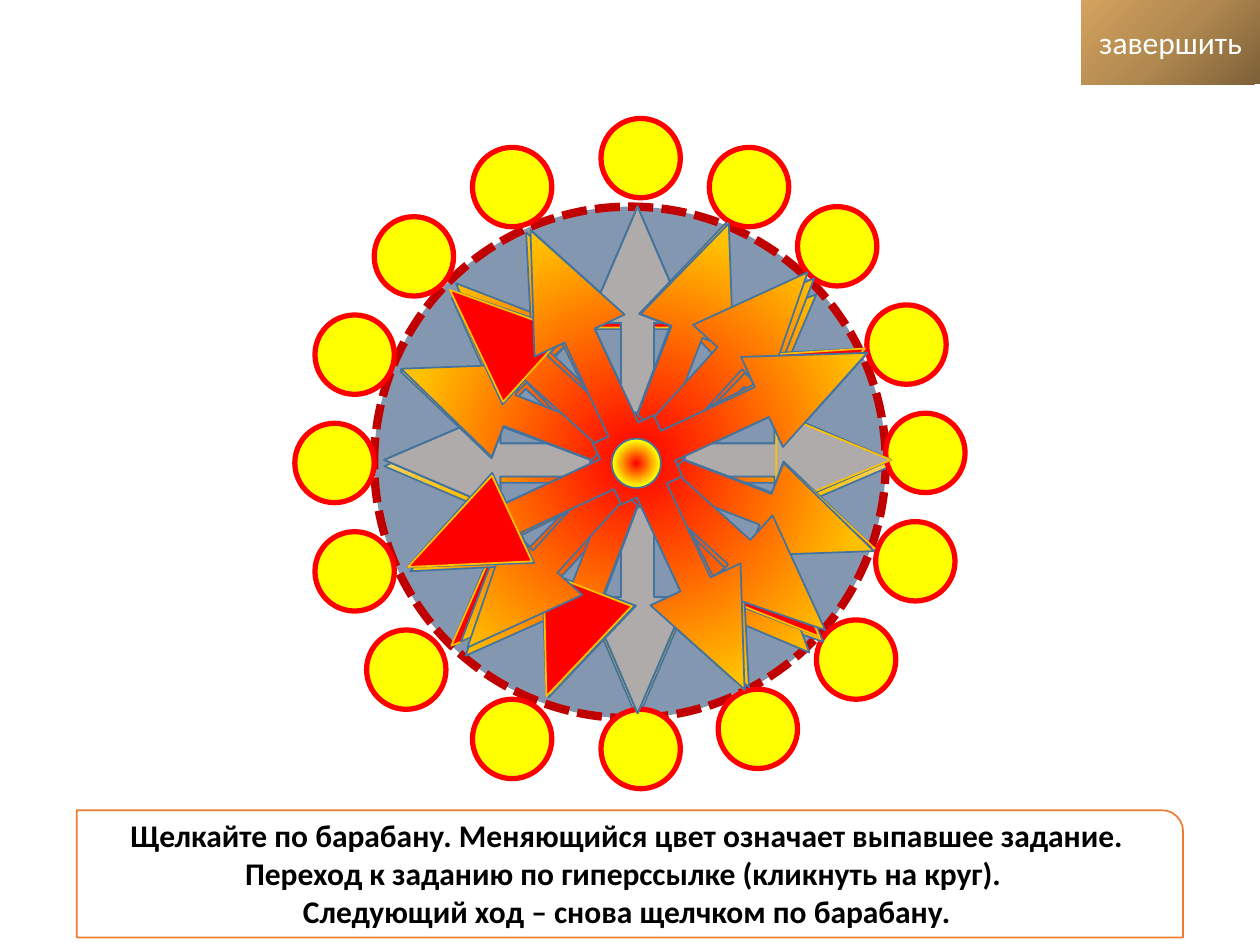
from dataclasses import dataclass
from math import cos, radians, sin
from typing import Optional, Union

from lxml import etree
from pptx import Presentation
from pptx.dml.color import RGBColor
from pptx.enum.dml import MSO_LINE
from pptx.enum.shapes import MSO_SHAPE
from pptx.enum.text import MSO_ANCHOR, MSO_AUTO_SIZE, PP_ALIGN
from pptx.oxml.ns import nsdecls, qn
from pptx.util import Inches, Pt

OVAL = MSO_SHAPE.OVAL
TRIANGLE = MSO_SHAPE.ISOSCELES_TRIANGLE
CALLOUT = MSO_SHAPE.QUAD_ARROW_CALLOUT
RECT = MSO_SHAPE.RECTANGLE
ROUND_RECT = MSO_SHAPE.ROUND_1_RECTANGLE
DASH = MSO_LINE.SQUARE_DOT
CENTER = PP_ALIGN.CENTER
TOP, MIDDLE = MSO_ANCHOR.TOP, MSO_ANCHOR.MIDDLE
FIT_SHAPE, NO_FIT = MSO_AUTO_SIZE.SHAPE_TO_FIT_TEXT, MSO_AUTO_SIZE.NONE

FONT = "Calibri"
GREY, RED, YELLOW, GOLD, BLUE = "AFABAB", "FF0000", "FFFF00", "FFC000", "43739E"


@dataclass(frozen=True)
class Gradient:
    colors: tuple[str, str, str]
    angle: Optional[int] = None


@dataclass(frozen=True)
class Spinner:
    angle: float
    cx: float = 5.06
    cy: float = 3.65
    grey: bool = False


Fill = Union[str, Gradient, None]
FIRE = Gradient((RED, GOLD, "E1EBFB"))
SUN = Gradient((RED, YELLOW, "E1EBFB"))
BRONZE = Gradient(("7D6038", "B18950", "D3A25E"), 225)

ARROW_SIZE, TIP_SIZE, HUB_SIZE = (4.02, 4.02), (0.75, 0.91), (0.39, 0.39)
ARROW_ADJ = (0.065, 0.098, 0.229, 0.133)
TIP_OFFSET, HUB_OFFSET = (0.0, -1.555), (-0.02, -0.02)
BALL = 0.63

BALLS = [
    (4.77, 0.94), (4.77, 5.63), (7.03, 3.28), (2.34, 3.36),
    (6.33, 1.64), (2.97, 1.72), (2.91, 5.0), (6.48, 4.92),
    (5.63, 1.17), (3.75, 1.17), (2.5, 2.5), (6.88, 2.42),
    (6.95, 4.14), (2.5, 4.22), (5.7, 5.47), (3.75, 5.55),
]

SPINNERS = [
    Spinner(42.8, cy=3.73), Spinner(226.1, cx=5.03, cy=3.73),
    Spinner(270), Spinner(155.1), Spinner(180), Spinner(0),
    Spinner(90, grey=True), Spinner(134.2), Spinner(334.9),
    Spinner(20.9), Spinner(63.9), Spinner(110.5), Spinner(201.1),
    Spinner(312.2), Spinner(245),
]


def rgb(color: str) -> RGBColor:
    return RGBColor.from_string(color)


def set_gradient(sp, gradient: Gradient) -> None:
    stops = "".join(
        f'<a:gs pos="{i * 50000}"><a:srgbClr val="{color}"/></a:gs>'
        for i, color in enumerate(gradient.colors)
    )
    if gradient.angle is None:
        shade = ('<a:path path="circle"><a:fillToRect l="50000" t="50000" '
                 'r="50000" b="50000"/></a:path>')
    else:
        shade = f'<a:lin ang="{gradient.angle * 60000}" scaled="0"/>'
    xml = (f'<a:gradFill {nsdecls("a")} rotWithShape="1">'
           f'<a:gsLst>{stops}</a:gsLst>{shade}</a:gradFill>')
    sp._element.spPr.find(qn("a:prstGeom")).addnext(etree.fromstring(xml))


def add_shape(shapes, kind, left: float, top: float, width: float, height: float,
              fill: Fill = None, line: Optional[str] = None, weight: float = 1,
              angle: float = 0):
    sp = shapes.add_shape(kind, Inches(left), Inches(top), Inches(width), Inches(height))
    sp.rotation = angle
    if isinstance(fill, Gradient):
        set_gradient(sp, fill)
    elif fill:
        sp.fill.solid()
        sp.fill.fore_color.rgb = rgb(fill)
    else:
        sp.fill.background()
    if line:
        sp.line.color.rgb = rgb(line)
        sp.line.width = Pt(weight)
    else:
        sp.line.fill.background()
    sp.shadow.inherit = False
    return sp


def add_spinner(shapes, spinner: Spinner) -> None:
    group = shapes.add_group_shape()
    turn = radians(spinner.angle)

    def add_part(kind, size, offset, fill: Fill, line: str):
        dx, dy = offset
        x = spinner.cx + dx * cos(turn) - dy * sin(turn)
        y = spinner.cy + dx * sin(turn) + dy * cos(turn)
        w, h = size
        return add_shape(group.shapes, kind, x - w / 2, y - h / 2, w, h,
                         GREY if spinner.grey else fill, line, angle=spinner.angle)

    arrows = add_part(CALLOUT, ARROW_SIZE, (0, 0), FIRE, BLUE)
    for i, value in enumerate(ARROW_ADJ):
        arrows.adjustments[i] = value
    add_part(TRIANGLE, TIP_SIZE, TIP_OFFSET, RED, GOLD)
    add_part(OVAL, HUB_SIZE, HUB_OFFSET, SUN, BLUE)


def set_text(sp, text: str, *, color: str, bold: bool = False, size: float = 18,
             anchor=MIDDLE, auto_size=NO_FIT) -> None:
    tf = sp.text_frame
    tf.word_wrap = True
    tf.auto_size = auto_size
    tf.vertical_anchor = anchor
    tf.text = text
    for p in tf.paragraphs:
        p.alignment = CENTER
        for r in p.runs:
            r.font.name = FONT
            r.font.size = Pt(size)
            r.font.bold = bold
            r.font.color.rgb = rgb(color)


def main() -> None:
    prs = Presentation()
    prs.slide_width, prs.slide_height = Inches(10), Inches(7.5)
    s = prs.slides.add_slide(prs.slide_layouts[6])
    shapes = s.shapes

    drum = (2.97, 1.64, 4.06, 4.06)
    add_shape(shapes, OVAL, *drum, fill="8497B0")
    rim = add_shape(shapes, OVAL, *drum, line="C00000", weight=4.75)
    rim.line.dash_style = DASH

    add_spinner(shapes, Spinner(0, cy=3.7))
    for left, top in BALLS:
        add_shape(shapes, OVAL, left, top, BALL, BALL, YELLOW, RED, 3)
    for spinner in SPINNERS:
        add_spinner(shapes, spinner)

    rules = add_shape(shapes, ROUND_RECT, 0.61, 6.43, 8.78, 1.01, "FFFFFF", "ED7D31")
    set_text(rules,
             "Щелкайте по барабану. Меняющийся цвет означает выпавшее задание. "
             "Переход к заданию по гиперссылке (кликнуть на круг). \n"
             "Следующий ход – снова щелчком по барабану.",
             color="000000", bold=True, anchor=TOP, auto_size=FIT_SHAPE)

    finish = add_shape(shapes, RECT, 8.58, 0, 1.42, 0.67, BRONZE)
    set_text(finish, "завершить", color="FFFFFF")

    prs.save("out.pptx")


if __name__ == "__main__":
    main()
